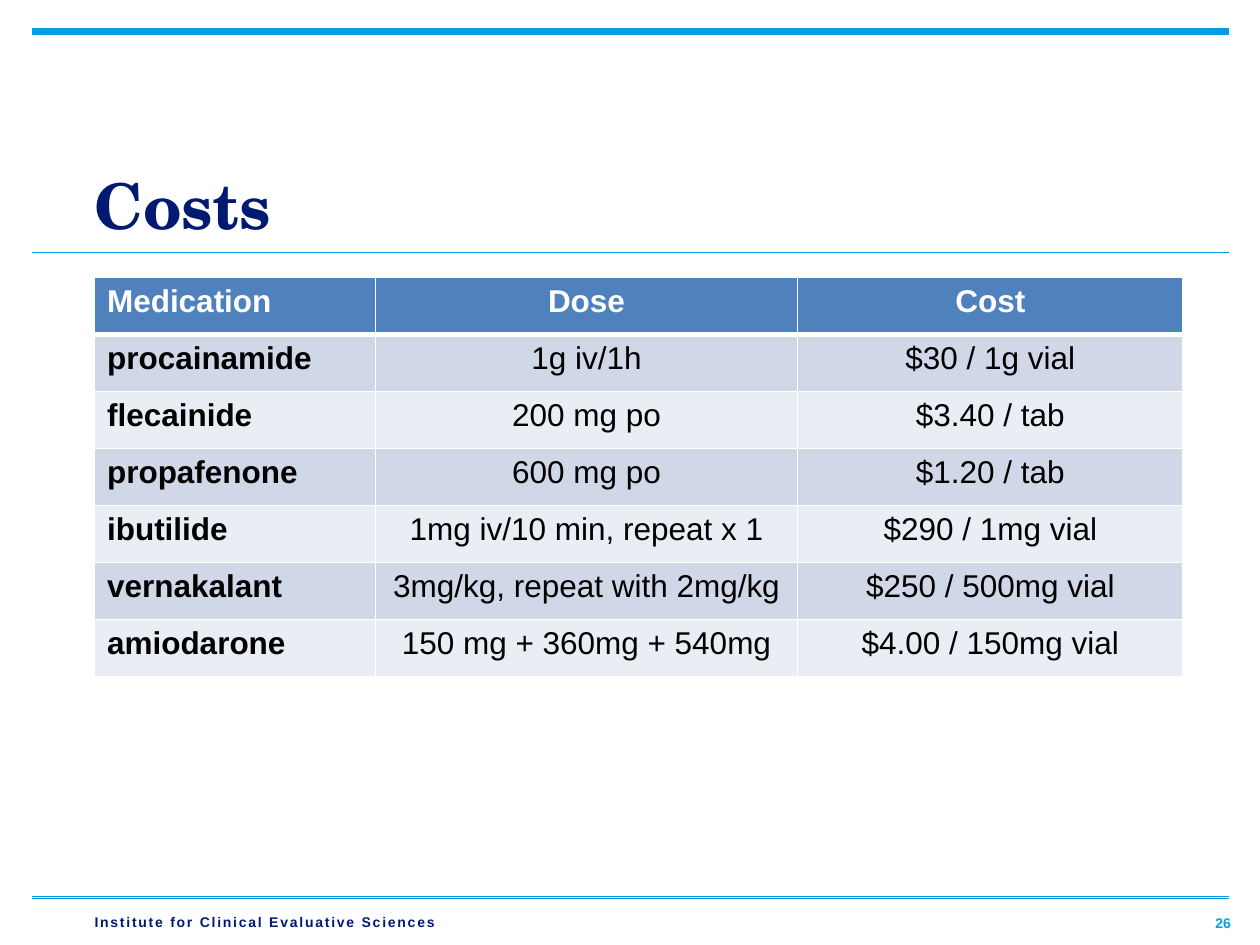
from lxml import etree
from pptx import Presentation
from pptx.dml.color import RGBColor
from pptx.enum.shapes import MSO_CONNECTOR
from pptx.enum.text import MSO_ANCHOR, PP_ALIGN
from pptx.oxml.ns import qn
from pptx.util import Inches, Pt

NAVY = RGBColor(0x00, 0x1A, 0x72)
SKY = RGBColor(0x00, 0x9F, 0xDF)
HEADER_BLUE = RGBColor(0x4F, 0x81, 0xBD)
BAND_DARK = RGBColor(0xD0, 0xD8, 0xE8)
BAND_LIGHT = RGBColor(0xE9, 0xED, 0xF4)
WHITE = RGBColor(0xFF, 0xFF, 0xFF)
BLACK = RGBColor(0x00, 0x00, 0x00)
LEFT, CENTER, RIGHT = PP_ALIGN.LEFT, PP_ALIGN.CENTER, PP_ALIGN.RIGHT
TOP, BOTTOM = MSO_ANCHOR.TOP, MSO_ANCHOR.BOTTOM
STRAIGHT = MSO_CONNECTOR.STRAIGHT

presentation = Presentation()
presentation.slide_width = Inches(10)
presentation.slide_height = Inches(7.5)
slide = presentation.slides.add_slide(presentation.slide_layouts[6])


def add_label(text, box, margins, size, font_name, color, align=LEFT, anchor=TOP):
    """Add a bold one-line text box and return its run; lengths in inches."""
    text_frame = slide.shapes.add_textbox(*map(Inches, box)).text_frame
    text_frame.word_wrap = True
    text_frame.vertical_anchor = anchor
    text_frame.margin_left, text_frame.margin_top = map(Inches, margins)
    text_frame.margin_right = text_frame.margin_bottom = 0
    text_frame.text = text
    paragraph = text_frame.paragraphs[0]
    paragraph.alignment = align
    run = paragraph.runs[0]
    run.font.size = Pt(size)
    run.font.name = font_name
    run.font.bold = True
    run.font.color.rgb = color
    return run


def set_borders(cell, bottom_width):
    """Give a cell white borders, 1 pt wide except at the bottom."""
    properties = cell._tc.get_or_add_tcPr()
    sides = {"a:lnL": 1, "a:lnR": 1, "a:lnT": 1, "a:lnB": bottom_width}
    for position, (tag, width) in enumerate(sides.items()):
        line = etree.Element(qn(tag), w=str(Pt(width)))
        fill = etree.SubElement(line, qn("a:solidFill"))
        etree.SubElement(fill, qn("a:srgbClr"), val=str(WHITE))
        properties.insert(position, line)


# Rules across the slide
for y, width in [(7.13, 0.25), (7.11, 0.25), (0.25, 4), (2, 0.25)]:
    rule = slide.shapes.add_connector(
        STRAIGHT, Inches(0.25), Inches(y), Inches(9.75), Inches(y))
    rule.line.color.rgb = SKY
    rule.line.width = Pt(width)
    etree.SubElement(rule._element.spPr, qn("a:effectLst"))

# Title, footer and slide number
add_label("Costs", (0.75, 0.45, 8.64, 1.47), (0, 0.05), 36,
          "TeX Gyre Schola", NAVY, anchor=BOTTOM)
footer_run = add_label("Institute for Clinical Evaluative Sciences",
                       (0.75, 7.25, 4.35, 0.4), (0, 0), 8, "Arial", NAVY)
footer_run.font._element.set("spc", "100")
add_label("26", (9.39, 7.26, 0.38, 0.29), (0.1, 0), 8, "Arial", SKY, align=RIGHT)

# Cost table
rows = [
    ("Medication", "Dose", "Cost"),
    ("procainamide", "1g iv/1h", "$30 / 1g vial"),
    ("flecainide", "200 mg po", "$3.40 / tab"),
    ("propafenone", "600 mg po", "$1.20 / tab"),
    ("ibutilide", "1mg iv/10 min, repeat x 1", "$290 / 1mg vial"),
    ("vernakalant", "3mg/kg, repeat with 2mg/kg", "$250 / 500mg vial"),
    ("amiodarone", "150 mg + 360mg + 540mg", "$4.00 / 150mg vial"),
]
column_widths = [2.23, 3.35, 3.06]
table = slide.shapes.add_table(
    len(rows), len(column_widths), Inches(0.75), Inches(2.2),
    Inches(sum(column_widths)), Inches(3.17)).table
for column, width in zip(table.columns, column_widths):
    column.width = Inches(width)

for row_index, row in enumerate(rows):
    is_header = row_index == 0
    band = BAND_DARK if row_index % 2 else BAND_LIGHT
    for column_index, text in enumerate(row):
        is_label = column_index == 0
        cell = table.cell(row_index, column_index)
        cell.fill.solid()
        cell.fill.fore_color.rgb = HEADER_BLUE if is_header else band
        set_borders(cell, 3 if is_header else 1)
        cell.text_frame.text = text
        paragraph = cell.text_frame.paragraphs[0]
        paragraph.alignment = LEFT if is_label else CENTER
        font = paragraph.runs[0].font
        font.size = Pt(18)
        font.name = "Arial"
        font.bold = is_header or is_label
        font.color.rgb = WHITE if is_header else BLACK

presentation.save("out.pptx")
